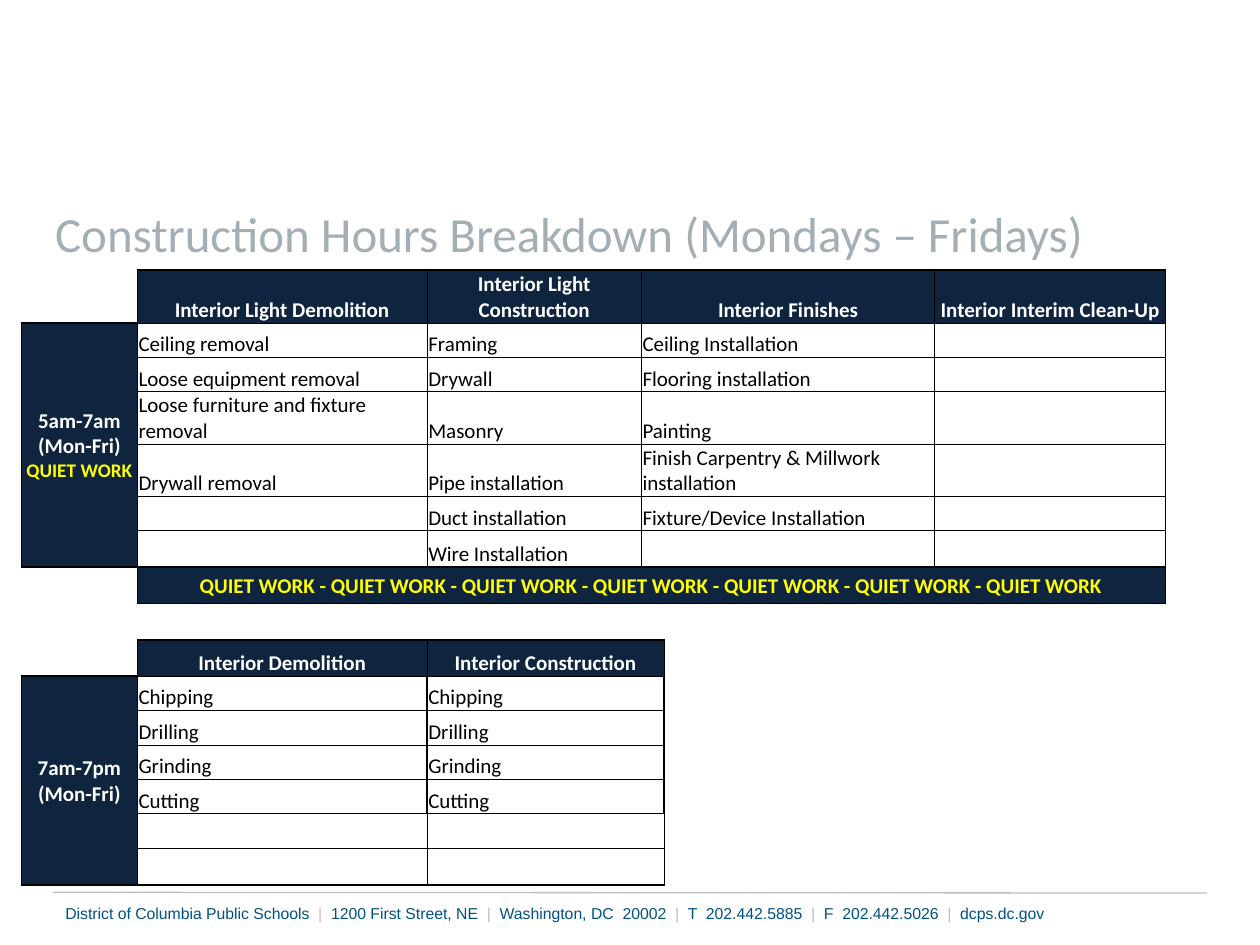
"""Builds the slide with the weekday construction hours table."""
from dataclasses import dataclass
from itertools import accumulate

from lxml import etree
from pptx import Presentation
from pptx.dml.color import RGBColor
from pptx.enum.shapes import MSO_CONNECTOR
from pptx.enum.text import MSO_ANCHOR, PP_ALIGN
from pptx.oxml.ns import qn
from pptx.slide import Slide
from pptx.table import Table
from pptx.text.text import _Paragraph
from pptx.util import Pt

BOTTOM, MIDDLE = MSO_ANCHOR.BOTTOM, MSO_ANCHOR.MIDDLE
LEFT, CENTER, JUSTIFY = PP_ALIGN.LEFT, PP_ALIGN.CENTER, PP_ALIGN.JUSTIFY
STRAIGHT = MSO_CONNECTOR.STRAIGHT


@dataclass(frozen=True)
class Theme:
    navy: str = "0F243E"
    white: str = "FFFFFF"
    black: str = "000000"
    yellow: str = "FFFF00"
    title: str = "A4AEB5"
    footer: str = "005283"
    rule: str = "BFBFBF"
    body_font: str = "Calibri"
    footer_font: str = "Arial"
    title_size: float = 28
    body_size: float = 12
    quiet_size: float = 11
    footer_size: float = 9
    thick: float = 1
    thin: float = 0.5
    no_grid_style: str = "{2D5ABB26-0587-4C30-8999-92F81FD0307C}"


@dataclass(frozen=True)
class Span:
    top: int
    left: int
    bottom: int
    right: int


@dataclass(frozen=True)
class Words:
    text: str
    color: str
    size: float = 0


@dataclass(frozen=True)
class Look:
    fill: str
    bold: bool
    align: PP_ALIGN
    anchor: MSO_ANCHOR


THEME = Theme()
HEADING = Look(THEME.navy, True, CENTER, BOTTOM)
TASK = Look(THEME.white, False, LEFT, BOTTOM)
BAND = Look(THEME.navy, True, CENTER, MIDDLE)

COLUMN_WIDTHS = [66.24, 165.6, 122.4, 12.96, 154.8, 41.04, 90.72, 84.24]
ROW_HEIGHTS = [22.6, 30.2, 19.7, 19.7, 29.9, 29.9, 19.7, 20.7, 20.9, 20.9,
               20.6, *[19.7] * 5, 20.9, 20.9]
QUIET = "QUIET WORK"
EARLY_WORK = [
    ["Interior Light Demolition", "Interior Light Construction",
     "Interior Finishes", "Interior Interim Clean-Up"],
    ["Ceiling removal", "Framing", "Ceiling Installation", ""],
    ["Loose equipment removal", "Drywall", "Flooring installation", ""],
    ["Loose furniture and fixture removal", "Masonry", "Painting", ""],
    ["Drywall removal", "Pipe installation",
     "Finish Carpentry & Millwork installation", ""],
    ["", "Duct installation", "Fixture/Device Installation", ""],
    ["", "Wire Installation", "", ""],
]
LOUD_TASKS = ["Chipping", "Drilling", "Grinding", "Cutting", "", ""]
DAY_WORK = [["Interior Demolition", "Interior Construction"],
            *[[task, task] for task in LOUD_TASKS]]
FOOTER = ["District of Columbia Public Schools", "1200 First Street, NE",
          "Washington, DC  20002", "T  202.442.5885", "F  202.442.5026",
          "dcps.dc.gov"]


def set_font(paragraph: _Paragraph, name: str, size: float, bold: bool = False) -> None:
    paragraph.font.name = name
    paragraph.font.size = Pt(size)
    paragraph.font.bold = bold


def add_words(paragraph: _Paragraph, words: list[Words]) -> None:
    for part in words:
        run = paragraph.add_run()
        run.text = part.text
        run.font.color.rgb = RGBColor.from_string(part.color)
        if part.size:
            run.font.size = Pt(part.size)


def add_border(properties: etree._Element, side: str, width: float) -> None:
    line = etree.SubElement(properties, qn(f"a:ln{side}"), w=str(Pt(width)))
    fill = etree.SubElement(line, qn("a:solidFill"))
    etree.SubElement(fill, qn("a:srgbClr"), val=THEME.black)


def fill_span(table: Table, span: Span, look: Look, words: list[Words],
              thin_sides: str = "") -> None:
    for row in range(span.top, span.bottom + 1):
        for column in range(span.left, span.right + 1):
            cell = table.cell(row, column)
            outer = {"L": column == span.left, "R": column == span.right,
                     "T": row == span.top, "B": row == span.bottom}
            for side in (side for side, shown in outer.items() if shown):
                add_border(cell._tc.get_or_add_tcPr(), side,
                           THEME.thin if side in thin_sides else THEME.thick)
            cell.fill.solid()
            cell.fill.fore_color.rgb = RGBColor.from_string(look.fill)
    origin = table.cell(span.top, span.left)
    if (span.top, span.left) != (span.bottom, span.right):
        origin.merge(table.cell(span.bottom, span.right))
    origin.vertical_anchor = look.anchor
    paragraph = origin.text_frame.paragraphs[0]
    paragraph.alignment = look.align
    set_font(paragraph, THEME.body_font, THEME.body_size, look.bold)
    add_words(paragraph, words)


def fill_schedule(table: Table, top: int, widths: list[int],
                  work: list[list[str]], divided_rows: range) -> None:
    lefts = list(accumulate(widths, initial=1))
    for index, entries in enumerate(work):
        look = TASK if index else HEADING
        color = THEME.black if index else THEME.white
        for column, entry in enumerate(entries):
            thin = {"T": index > 0, "B": index < len(work) - 1,
                    "L": column > 0 and index not in divided_rows,
                    "R": column < len(widths) - 1 and index not in divided_rows}
            span = Span(top + index, lefts[column], top + index, lefts[column + 1] - 1)
            fill_span(table, span, look, [Words(entry, color)] if entry else [],
                      "".join(side for side, is_thin in thin.items() if is_thin))


def add_hours_table(slide: Slide) -> None:
    table = slide.shapes.add_table(
        len(ROW_HEIGHTS), len(COLUMN_WIDTHS), Pt(12.24), Pt(131.76),
        Pt(sum(COLUMN_WIDTHS)), Pt(sum(ROW_HEIGHTS))).table
    table.first_row = table.horz_banding = False
    table._tbl.tblPr.find(qn("a:tableStyleId")).text = THEME.no_grid_style
    for column, width in zip(table.columns, COLUMN_WIDTHS):
        column.width = Pt(width)
    for row, height in zip(table.rows, ROW_HEIGHTS):
        row.height = Pt(height)
    for cell in table.iter_cells():
        cell.margin_left = cell.margin_right = cell.margin_top = Pt(0.7)
        cell.margin_bottom = Pt(0)

    fill_schedule(table, 1, [1, 1, 2, 2], EARLY_WORK, range(0))
    fill_schedule(table, 10, [1, 2], DAY_WORK, range(1, 5))
    fill_span(table, Span(2, 0, 7, 0), BAND,
              [Words("5am-7am (Mon-Fri) ", THEME.white),
               Words(QUIET, THEME.yellow, THEME.quiet_size)])
    fill_span(table, Span(8, 1, 8, 6), BAND,
              [Words(" - ".join([QUIET] * 7), THEME.yellow)])
    fill_span(table, Span(11, 0, 16, 0), BAND,
              [Words("7am-7pm (Mon-Fri)", THEME.white)])

    for cell in table.iter_cells():
        if not cell.text_frame.text:
            etree.SubElement(cell.text_frame.paragraphs[0]._p, qn("a:endParaRPr"),
                             sz=str(int(THEME.body_size * 100)))


def add_line_of_text(slide: Slide, box: tuple[float, float, float, float],
                     anchor: MSO_ANCHOR) -> _Paragraph:
    frame = slide.shapes.add_textbox(*map(Pt, box)).text_frame
    frame.word_wrap = True
    frame.vertical_anchor = anchor
    return frame.paragraphs[0]


def add_footer(slide: Slide) -> None:
    rule = slide.shapes.add_connector(STRAIGHT, Pt(30.24), Pt(509.9), Pt(689.76), Pt(510.3))
    rule.line.color.rgb = RGBColor.from_string(THEME.rule)
    rule.line.width = Pt(0.75)
    etree.SubElement(rule._element.spPr, qn("a:effectLst"))
    contact = add_line_of_text(slide, (30.24, 512.64, 660.24, 18), MIDDLE)
    contact.alignment = JUSTIFY
    set_font(contact, THEME.footer_font, THEME.footer_size)
    for index, detail in enumerate(FOOTER):
        if index:
            add_words(contact, [Words("  |  ", THEME.rule)])
        add_words(contact, [Words(detail, THEME.footer)])


def main() -> None:
    deck = Presentation()
    deck.slide_width, deck.slide_height = Pt(720), Pt(540)
    slide = deck.slides.add_slide(deck.slide_layouts[6])
    add_footer(slide)
    title = add_line_of_text(slide, (24.48, 123.12, 660.24, 30.24), BOTTOM)
    set_font(title, THEME.body_font, THEME.title_size)
    add_words(title, [Words("Construction Hours Breakdown (Mondays – Fridays)", THEME.title)])
    add_hours_table(slide)
    deck.save("out.pptx")


if __name__ == "__main__":
    main()
